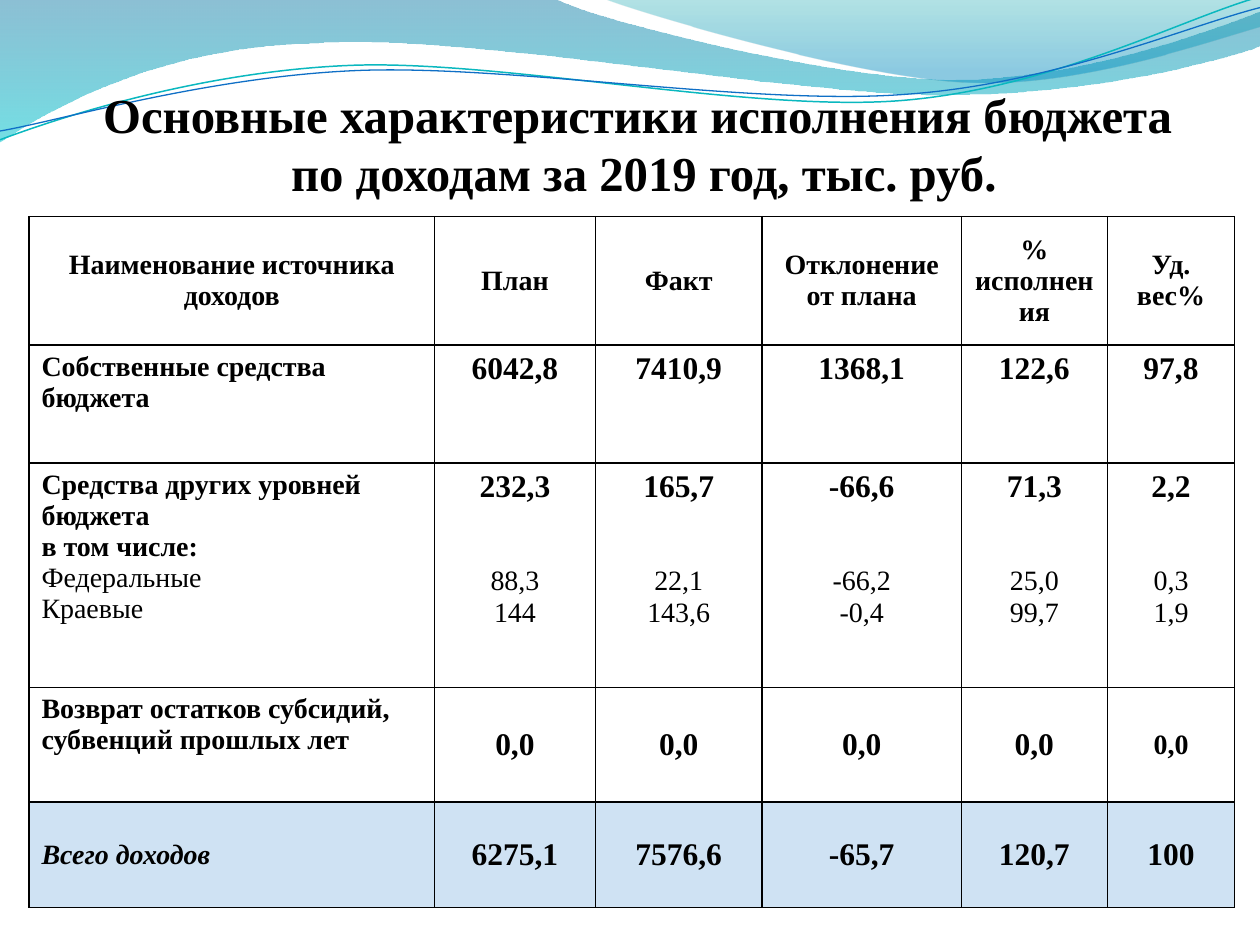
import math
from dataclasses import dataclass

from lxml import etree
from pptx import Presentation, util as u
from pptx.dml import color
from pptx.enum import text
from pptx.oxml import ns

COLS, ROWS = 100, 75


@dataclass(frozen=True)
class Theme:
    font: str = "Times New Roman"
    ink: str = "000000"
    accent: str = "0F6FC6"
    teal: str = "0AB8BF"
    total_alpha: int = 20
    title: float = 27.9
    body: float = 16
    figure: float = 18
    subtotal_gap: float = 35.3
    wave_turn: float = 357.3


T = Theme()

BANDS = [
    ((-0.1, -0.1, 100.2, 11.4),
     [[(0, 0)], [(44, -0.1)],
      [(47.6, 1.7), (66.4, 6.3), (75.8, 6.3)], [(85.3, 6.3), (95.8, 2.6), (100, 0.9)],
      [(100.1, 3.6)],
      [(98.3, 4.4), (87, 7.6), (74.6, 7.5)], [(62.2, 7.5), (38.2, 2.8), (25.7, 3.4)],
      [(12.9, 3.6), (4.6, 8.3), (-0.1, 11.3)], [(0, 0)]],
     [(0, "0074A1", 45), (1, "00C6CF", 55)]),
    ((47.9, -0.1, 52.1, 7),
     [[(47.9, -0.1)],
      [(50.9, 1.1), (68.2, 6.2), (76.9, 6.5)], [(85.6, 6.9), (96.1, 3.2), (100, 2.1)],
      [(100, 0)], [(47.9, -0.1)]],
     [(0, "00A1A9", 30), (0.8, "008BBF", 45)]),
]
WAVES = [
    ((-0.2, 2.2, 100.2, 7.1),
     [[(0, 11.1)], [(4.8, 9.3), (15.8, 5.7), (27.7, 5.2)],
      [(39.5, 4.7), (59.3, 8.9), (71.3, 8)], [(83.3, 7.1), (93.8, 1.5), (99.8, -0.2)]],
     T.teal, 0.85),
    ((-0.2, 3, 100.3, 5.8),
     [[(0, 10.4)], [(4.7, 9.6), (16.4, 6.1), (28.3, 5.6)],
      [(40.3, 5.1), (59.7, 8.4), (71.7, 7.5)], [(83.6, 6.7), (94.1, 2.1), (100, 0.6)]],
     T.accent, 0.75),
]

COLUMN_WIDTHS = [32.2, 12.75, 13.25, 15.8, 11.6, 10.1]
ROW_HEIGHTS = [10.2, 9.35, 17.8, 9.1, 8.4]
HEADERS = ["Наименование источника доходов", "План", "Факт",
           "Отклонение от плана", "%\nисполнения", "Уд. вес%"]
OWN = ["6042,8", "7410,9", "1368,1", "122,6", "97,8"]
OTHER = ["232,3", "165,7", "-66,6", "71,3", "2,2"]
FEDERAL = ["88,3", "22,1", "-66,2", "25,0", "0,3"]
REGIONAL = ["144", "143,6", "-0,4", "99,7", "1,9"]
RETURNED = ["0,0"] * 5
TOTAL = ["6275,1", "7576,6", "-65,7", "120,7", "100"]


def rgb(value):
    return color.RGBColor.from_string(value)


def add_alpha(parent, shares):
    for clr, share in zip(parent.iter(ns.qn("a:srgbClr")), shares):
        etree.SubElement(clr, ns.qn("a:alpha"), val=str(share * 1000))


def place(sp, unit, box):
    sp.left, sp.top, sp.width, sp.height = (round(n * unit) for n in box)


def turn_back(parts, box, degrees):
    left, top, width, height = box
    cx, cy = left + width / 2, top + height / 2
    cos, sin = math.cos(math.radians(degrees)), math.sin(math.radians(degrees))
    return [[(cx + (x - cx) * cos + (y - cy) * sin,
              cy - (x - cx) * sin + (y - cy) * cos) for x, y in part]
            for part in parts]


def add_outline(slide, unit, box, parts, close):
    ends = [(part[-1][0] * unit, part[-1][1] * unit) for part in parts]
    builder = slide.shapes.build_freeform(*ends[0], scale=1.0)
    builder.add_line_segments(ends[1:], close=close)
    sp = builder.convert_to_shape()
    sp.shadow.inherit = False
    place(sp, unit, box)
    path = next(sp.element.iter(ns.qn("a:path")))
    path.set("w", str(sp.width))
    path.set("h", str(sp.height))
    for step, part in zip(list(path), parts):
        if len(part) == 3:
            step.tag = ns.qn("a:cubicBezTo")
        for pt in list(step):
            step.remove(pt)
        for x, y in part:
            etree.SubElement(step, ns.qn("a:pt"), x=str(round(x * unit) - sp.left),
                             y=str(round(y * unit) - sp.top))
    return sp


def add_band(slide, unit, box, parts, stops):
    sp = add_outline(slide, unit, box, parts, True)
    sp.line.fill.background()
    sp.fill.gradient()
    sp.fill.gradient_angle = 270
    for stop, (position, value, _) in zip(sp.fill.gradient_stops, stops):
        stop.position = position
        stop.color.rgb = rgb(value)
    add_alpha(sp.element.spPr, [alpha for _, _, alpha in stops])


def add_wave(slide, unit, box, parts, value, width):
    sp = add_outline(slide, unit, box, turn_back(parts, box, T.wave_turn), False)
    sp.rotation = T.wave_turn
    sp.fill.background()
    sp.line.color.rgb = rgb(value)
    sp.line.width = u.Pt(width)


def add_run(p, words, size, bold=True, italic=False):
    r = p.add_run()
    r.text = words
    r.font.name = T.font
    r.font.size = u.Pt(size)
    r.font.bold = bold
    r.font.italic = italic
    r.font.color.rgb = rgb(T.ink)


def add_title(slide, unit):
    sp = slide.shapes.title
    place(sp, unit, (6.2, 6.2, 89.8, 9.8))
    tf = sp.text_frame
    tf.word_wrap = True
    tf.auto_size = text.MSO_AUTO_SIZE.NONE
    tf.vertical_anchor = text.MSO_ANCHOR.BOTTOM
    tf.margin_left = tf.margin_right = tf.margin_bottom = 0
    p = tf.paragraphs[0]
    p.alignment = text.PP_ALIGN.CENTER
    add_run(p, "Основные характеристики исполнения бюджета ", T.title)
    p.add_line_break()
    add_run(p, "по доходам за 2019 год, тыс. руб.", T.title)
    slide.shapes.element.append(sp.element)


def set_borders(tc_pr):
    for side in ("a:lnL", "a:lnR", "a:lnT", "a:lnB"):
        ln = etree.SubElement(tc_pr, ns.qn(side), w=str(u.Pt(1)))
        fill = etree.SubElement(ln, ns.qn("a:solidFill"))
        etree.SubElement(fill, ns.qn("a:srgbClr"), val=T.ink)


def fill_cell(cell, lines, align, middle, total):
    cell.vertical_anchor = text.MSO_ANCHOR.MIDDLE if middle else text.MSO_ANCHOR.TOP
    tc_pr = cell._tc.get_or_add_tcPr()
    set_borders(tc_pr)
    if total:
        cell.fill.solid()
        cell.fill.fore_color.rgb = rgb(T.accent)
        add_alpha(tc_pr.find(ns.qn("a:solidFill")), [T.total_alpha])
    else:
        cell.fill.background()
    tf = cell.text_frame
    for i, (words, size, bold, italic, gap) in enumerate(lines):
        p = tf.add_paragraph() if i else tf.paragraphs[0]
        p.alignment = align
        if gap:
            p.space_before = u.Pt(gap)
        add_run(p, words, size, bold, italic)


def line(words, size=T.body, bold=True, italic=False, gap=0):
    return words, size, bold, italic, gap


def figures(values):
    return [[line(value, T.figure)] for value in values]


def table_rows():
    header = [[line(words) for words in name.split("\n")] for name in HEADERS]
    own = [[line("Собственные средства бюджета")]] + figures(OWN)
    other = [[line("Средства других уровней бюджета"), line("в том числе:"),
              line("Федеральные", bold=False), line("Краевые", bold=False)]]
    other += [[line(a, T.figure), line(b, bold=False, gap=T.subtotal_gap),
               line(c, bold=False)] for a, b, c in zip(OTHER, FEDERAL, REGIONAL)]
    returned = [[line("Возврат остатков субсидий, субвенций прошлых лет")]]
    returned += figures(RETURNED[:-1]) + [[line(RETURNED[-1])]]
    total = [[line("Всего доходов", italic=True)]] + figures(TOTAL)
    return [header, own, other, returned, total]


def add_budget_table(slide, unit):
    rows = table_rows()
    frame = slide.shapes.add_table(len(rows), len(HEADERS), 0, 0, 0, 0)
    place(frame, unit, (2.3, 17.2, sum(COLUMN_WIDTHS), sum(ROW_HEIGHTS)))
    table = frame.table
    table.first_row = table.horz_banding = False
    for column, width in zip(table.columns, COLUMN_WIDTHS):
        column.width = round(width * unit)
    for row, height in zip(table.rows, ROW_HEIGHTS):
        row.height = round(height * unit)
    last = len(rows) - 1
    for i, row in enumerate(rows):
        for j, lines in enumerate(row):
            label = i > 0 and j == 0
            align = text.PP_ALIGN.LEFT if label else text.PP_ALIGN.CENTER
            middle = i in (0, last) or (i == last - 1 and not label)
            fill_cell(table.cell(i, j), lines, align, middle, i == last)


def main():
    prs = Presentation()
    prs.slide_width, prs.slide_height = u.Inches(10), u.Inches(7.5)
    unit = prs.slide_width / COLS
    slide = prs.slides.add_slide(prs.slide_layouts[5])
    for band in BANDS:
        add_band(slide, unit, *band)
    for wave in WAVES:
        add_wave(slide, unit, *wave)
    add_budget_table(slide, unit)
    add_title(slide, unit)
    prs.save("out.pptx")


if __name__ == "__main__":
    main()
